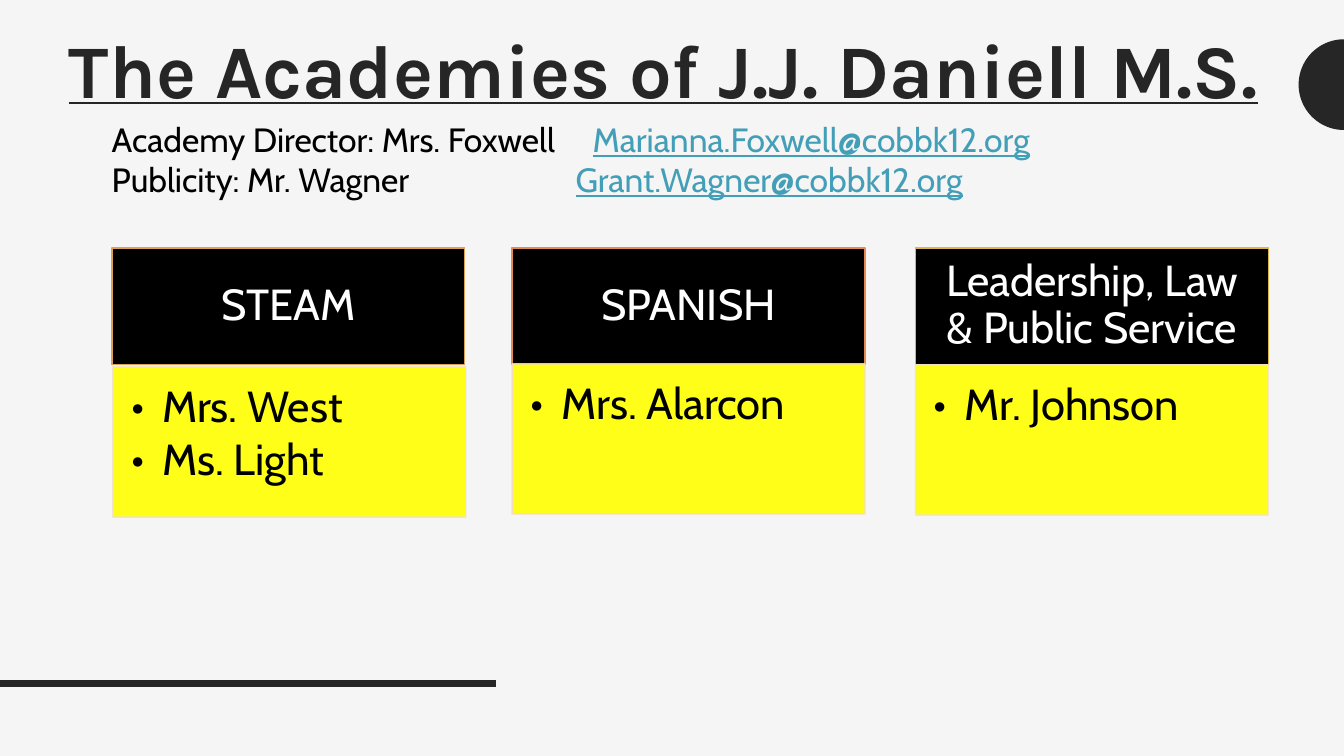
from dataclasses import dataclass
from math import cos, pi, sin

from lxml import etree
from pptx import Presentation
from pptx import util as u
from pptx.dml.color import RGBColor
from pptx.enum import shapes, text
from pptx.oxml.ns import qn

BACKGROUND = RGBColor(0xF5, 0xF5, 0xF5)
DARK = RGBColor(0x26, 0x26, 0x26)
BLACK = RGBColor(0, 0, 0)
WHITE = RGBColor(0xFF, 0xFF, 0xFF)
YELLOW = RGBColor(0xFF, 0xFF, 0)
LINK = RGBColor(0x43, 0x9E, 0xB7)


@dataclass
class Academy:
    name: str
    teachers: list[str]
    left: float
    top: float
    body_left: float
    body_top: float
    head_line: RGBColor
    body_line: RGBColor


@dataclass
class Contact:
    role: str
    email: str
    tab: float


ACADEMIES = [
    Academy("STEAM", ["Mrs. West", "Ms. Light"], 1.11, 2.46, 1.12, 3.64,
            RGBColor(0xDF, 0xA0, 0x51), RGBColor(0xF3, 0xE0, 0xD0)),
    Academy("SPANISH", ["Mrs. Alarcon"], 5.08, 2.46, 5.08, 3.61,
            RGBColor(0xE2, 0x8B, 0x55), RGBColor(0xF4, 0xDA, 0xD1)),
    Academy("Leadership, Law & Public Service", ["Mr. Johnson"], 9.08, 2.46, 9.08, 3.62,
            RGBColor(0xDC, 0xB6, 0x4D), RGBColor(0xF2, 0xE5, 0xD0)),
]
CONTACTS = [
    Contact("Academy Director: Mrs. Foxwell", "Marianna.Foxwell@cobbk12.org", 4.77),
    Contact("Publicity: Mr. Wagner", "Grant.Wagner@cobbk12.org", 4.6),
]


def add_run(p, words: str, size: float, color: RGBColor, font: str = "Cabin",
            bold: bool = False, underline: bool = False) -> None:
    r = p.add_run()
    r.text = words
    r.font.size = u.Pt(size)
    r.font.name = font
    r.font.bold = bold
    r.font.underline = underline
    r.font.color.rgb = color


def add_text_box(s, left: float, top: float, width: float, height: float):
    tf = s.shapes.add_textbox(u.Inches(left), u.Inches(top),
                              u.Inches(width), u.Inches(height)).text_frame
    tf.word_wrap = True
    return tf


def next_paragraph(tf, index: int):
    return tf.paragraphs[0] if index == 0 else tf.add_paragraph()


def set_alpha(fill_parent, percent: int) -> None:
    color = fill_parent.find(qn("a:solidFill"))[0]
    etree.SubElement(color, qn("a:alpha"), val=str(percent * 1000))


def add_panel(s, left: float, top: float, height: float, fill: RGBColor,
              line: RGBColor, insets: tuple[float, float, float, float]):
    sp = s.shapes.add_shape(shapes.MSO_SHAPE.RECTANGLE, u.Inches(left), u.Inches(top),
                            u.Inches(3.5), u.Inches(height))
    sp.shadow.inherit = False
    sp.fill.solid()
    sp.fill.fore_color.rgb = fill
    sp.line.color.rgb = line
    sp.line.width = u.Pt(1)
    tf = sp.text_frame
    tf.word_wrap = True
    tf.margin_left, tf.margin_top, tf.margin_right, tf.margin_bottom = map(u.Inches, insets)
    return sp


def add_academy(s, academy: Academy) -> None:
    head = add_panel(s, academy.left, academy.top, 1.16, BLACK, academy.head_line,
                     (0.24, 0.14, 0.24, 0.14))
    head.text_frame.vertical_anchor = text.MSO_ANCHOR.MIDDLE
    p = head.text_frame.paragraphs[0]
    p.alignment = text.PP_ALIGN.CENTER
    p.line_spacing = 0.9
    add_run(p, academy.name, 31, WHITE)

    body = add_panel(s, academy.body_left, academy.body_top, 1.49, YELLOW, academy.body_line,
                     (0.18, 0.18, 0.24, 0.27))
    set_alpha(body.element.spPr, 90)
    set_alpha(body.element.spPr.find(qn("a:ln")), 90)
    tf = body.text_frame
    tf.vertical_anchor = text.MSO_ANCHOR.TOP
    for i, teacher in enumerate(academy.teachers):
        p = next_paragraph(tf, i)
        p.alignment = text.PP_ALIGN.LEFT
        p.line_spacing = 0.9
        p.space_after = u.Pt(4.65)
        pPr = p._p.get_or_add_pPr()
        pPr.set("marL", str(u.Inches(0.31)))
        pPr.set("indent", str(-u.Inches(0.31)))
        etree.SubElement(pPr, qn("a:buFont"), typeface="Cabin")
        etree.SubElement(pPr, qn("a:buChar"), char="•")
        add_run(p, teacher, 31, BLACK)


def add_contacts(s) -> None:
    tf = add_text_box(s, 1.01, 1.13, 9.99, 0.91)
    for i, contact in enumerate(CONTACTS):
        p = next_paragraph(tf, i)
        tabs = etree.SubElement(p._p.get_or_add_pPr(), qn("a:tabLst"))
        etree.SubElement(tabs, qn("a:tab"), pos=str(u.Inches(contact.tab)), algn="l")
        add_run(p, contact.role + "\t", 24, BLACK)
        add_run(p, contact.email, 24, LINK, underline=True)


def add_half_disc(s, center_x: float, center_y: float, radius: float) -> None:
    """Draw the left half of a disc."""
    steps = 48
    angles = [pi / 2 + pi * i / steps for i in range(steps + 1)]
    points = [(u.Inches(center_x + radius * cos(a)), u.Inches(center_y + radius * sin(a)))
              for a in angles]
    builder = s.shapes.build_freeform(*points[0])
    builder.add_line_segments(points[1:], close=True)
    sp = builder.convert_to_shape()
    sp.shadow.inherit = False
    sp.fill.solid()
    sp.fill.fore_color.rgb = DARK
    sp.line.fill.background()


def add_footer_rule(s) -> None:
    rule = s.shapes.add_connector(shapes.MSO_CONNECTOR.STRAIGHT, u.Inches(0), u.Inches(6.78),
                                  u.Inches(4.92), u.Inches(6.78))
    rule.line.color.rgb = DARK
    rule.line.width = u.Pt(4.5)
    etree.SubElement(rule.element.spPr, qn("a:effectLst"))


def add_title(s) -> None:
    p = add_text_box(s, 0.58, 0.28, 12, 2.61).paragraphs[0]
    p.alignment = text.PP_ALIGN.CENTER
    p.line_spacing = 0.9
    add_run(p, "The Academies of J.J. Daniell M.S.", 54, DARK, "Karla", bold=True, underline=True)


def main() -> None:
    prs = Presentation()
    prs.slide_width = u.Inches(13.33)
    prs.slide_height = u.Inches(7.5)
    s = prs.slides.add_slide(prs.slide_layouts[6])
    s.background.fill.solid()
    s.background.fill.fore_color.rgb = BACKGROUND
    add_half_disc(s, 13.33, 0.84, 0.45)
    add_footer_rule(s)
    add_title(s)
    for academy in ACADEMIES:
        add_academy(s, academy)
    add_contacts(s)
    prs.save("out.pptx")


if __name__ == "__main__":
    main()
